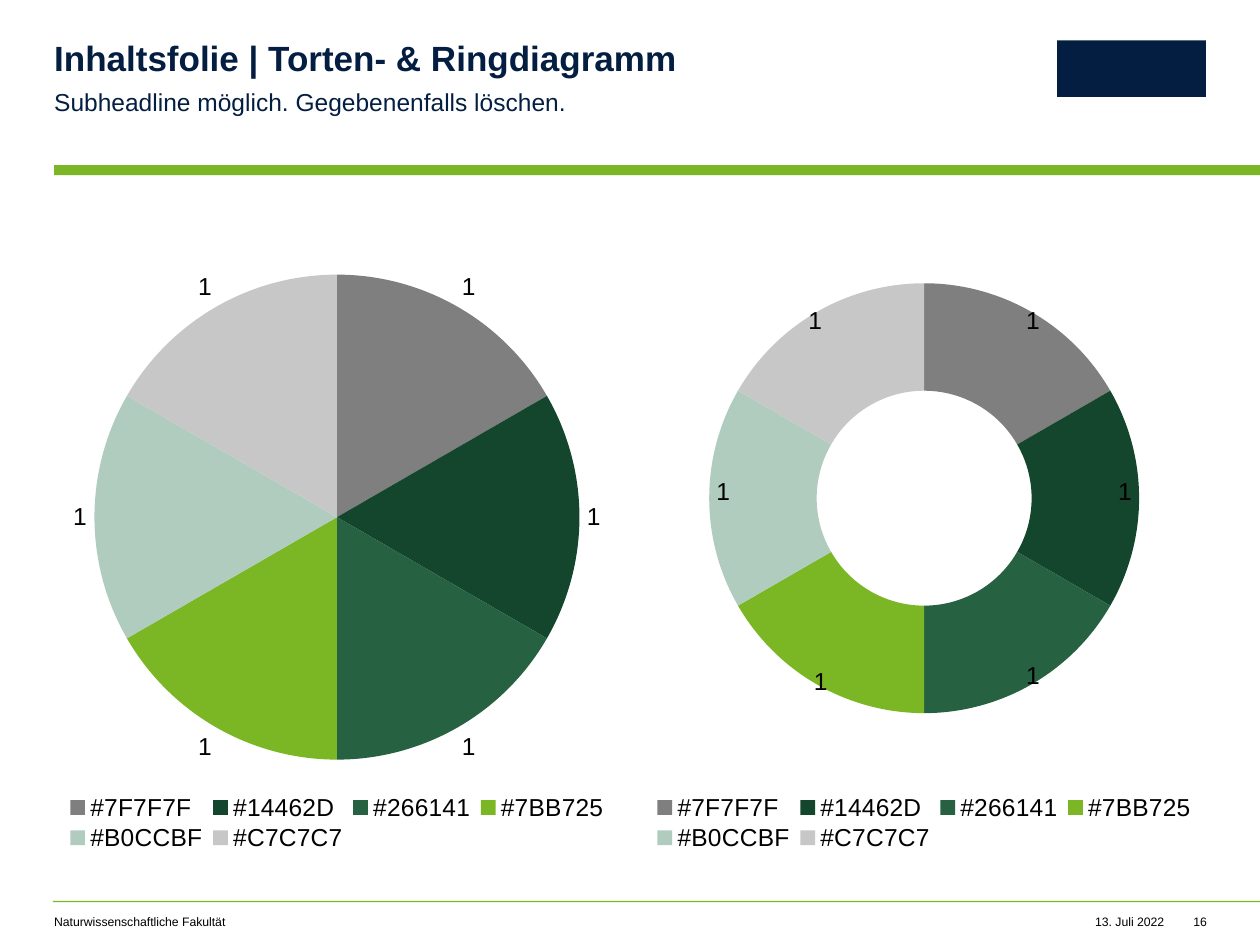
from copy import deepcopy
from dataclasses import dataclass

from lxml import etree
from pptx import Presentation, util as u
from pptx.chart.data import CategoryChartData
from pptx.dml.color import RGBColor
from pptx.enum import chart as charts, shapes, text
from pptx.oxml import ns


@dataclass(frozen=True)
class Theme:
    font: str = "Arial"
    navy: str = "041E42"
    green: str = "7BB725"
    black: str = "000000"
    segments: tuple = ("7F7F7F", "14462D", "266141", "7BB725", "B0CCBF", "C7C7C7")
    title: int = 20
    body: int = 14
    chart: int = 10
    footer: int = 7


THEME = Theme()
PIE_PLOT = {"x": 0.07, "y": 0.08, "w": 0.86, "h": 0.77}
RING_PLOT = {"x": 0.12, "y": 0.09, "w": 0.76, "h": 0.69}
LEGEND = {"x": 0.01, "y": 0.9, "w": 0.98, "h": 0.1}
RING_LABEL_SHIFTS = ((0.05, -0.06), (0.07, -0.01), (0.05, 0.06),
                     (-0.04, 0.07), (-0.07, -0.01), (-0.05, -0.06))


def style_font(font, size, color=THEME.black, bold=False):
    font.name = THEME.font
    font.size = u.Pt(size)
    font.bold = bold
    font.color.rgb = RGBColor.from_string(color)


def add_text(slide, wording, left, top, width, height, *, size, color=THEME.black,
             bold=False, align=text.PP_ALIGN.LEFT, wrap=True, line_spacing=1.0,
             space_after=0, right_inset=0):
    box = slide.shapes.add_textbox(*map(u.Inches, (left, top, width, height)))
    frame = box.text_frame
    frame.margin_left = frame.margin_top = frame.margin_bottom = 0
    frame.margin_right = u.Inches(right_inset)
    frame.word_wrap = wrap
    paragraph = frame.paragraphs[0]
    paragraph.alignment = align
    paragraph.line_spacing = line_spacing
    paragraph.space_after = u.Pt(space_after)
    run = paragraph.add_run()
    run.text = wording
    style_font(run.font, size, color, bold)


def add_block(slide, left, top, width, height, color):
    block = slide.shapes.add_shape(shapes.MSO_SHAPE.RECTANGLE,
                                   *map(u.Inches, (left, top, width, height)))
    block.shadow.inherit = False
    block.fill.solid()
    block.fill.fore_color.rgb = RGBColor.from_string(color)
    block.line.fill.background()


def add_value(parent, tag, value):
    etree.SubElement(parent, ns.qn(f"c:{tag}")).set("val", str(value))


def manual_layout(values, target=None, edge=False):
    layout = etree.Element(ns.qn("c:layout"))
    manual = etree.SubElement(layout, ns.qn("c:manualLayout"))
    if target:
        add_value(manual, "layoutTarget", target)
    if edge:
        add_value(manual, "xMode", "edge")
        add_value(manual, "yMode", "edge")
    for tag, value in values.items():
        add_value(manual, tag, value)
    return layout


def place_part(part, index, layout):
    for previous in part.findall(ns.qn("c:layout")):
        part.remove(previous)
    part.insert(index, layout)


def add_segment_chart(slide, kind, left, plot_place):
    segments = CategoryChartData()
    segments.categories = [f"#{color}" for color in THEME.segments]
    segments.add_series("Series 1", [1] * len(THEME.segments))
    chart = slide.shapes.add_chart(
        kind, *map(u.Inches, (left, 1.78, 4.49, 5)), segments).chart
    chart.has_title = False
    style_font(chart.font, THEME.chart)
    chart.has_legend = True
    chart.legend.position = charts.XL_LEGEND_POSITION.BOTTOM
    chart.legend.include_in_layout = False
    style_font(chart.legend.font, THEME.body)
    plot = chart.plots[0]
    plot.vary_by_categories = True
    series = plot.series[0]
    for index, color in enumerate(THEME.segments):
        fill = series.points[index].format.fill
        fill.solid()
        fill.fore_color.rgb = RGBColor.from_string(color)
    labels = series.data_labels
    labels.show_value = True
    labels.show_percentage = False
    style_font(labels.font, THEME.body)
    if kind == charts.XL_CHART_TYPE.PIE:
        labels.position = charts.XL_LABEL_POSITION.OUTSIDE_END
    plot_area = chart.element.xpath(".//c:plotArea")[0]
    legend = chart.element.xpath(".//c:legend")[0]
    place_part(plot_area, 0, manual_layout(plot_place, target="inner", edge=True))
    place_part(legend, 1, manual_layout(LEGEND, edge=True))
    return chart


def arrange_ring(chart):
    chart.element.xpath(".//c:holeSize")[0].set("val", "80")
    labels = chart.element.xpath(".//c:ser/c:dLbls")[0]
    label_font = labels.find(ns.qn("c:txPr"))
    for index, (x, y) in enumerate(RING_LABEL_SHIFTS):
        label = etree.Element(ns.qn("c:dLbl"))
        add_value(label, "idx", index)
        label.append(manual_layout({"x": x, "y": y}))
        label.append(deepcopy(label_font))
        for part in ("LegendKey", "Val", "CatName", "SerName", "Percent", "BubbleSize"):
            add_value(label, f"show{part}", int(part == "Val"))
        labels.insert(index, label)


def main():
    deck = Presentation()
    deck.slide_width, deck.slide_height = u.Inches(10), u.Inches(7.5)
    slide = deck.slides.add_slide(deck.slide_layouts[6])

    add_block(slide, 0.43, 1.31, 9.57, 0.08, THEME.green)
    add_block(slide, 0.42, 7.15, 9.58, 0.01, THEME.green)
    add_block(slide, 8.39, 0.32, 1.18, 0.45, THEME.navy)

    right = text.PP_ALIGN.RIGHT
    add_text(slide, "13. Juli 2022", 8.53, 7.26, 0.71, 0.12,
             size=THEME.footer, align=right, wrap=False)
    add_text(slide, "Naturwissenschaftliche Fakultät", 0.43, 7.26, 4.49, 0.12,
             size=THEME.footer)
    add_text(slide, "16", 9.41, 7.26, 0.17, 0.1,
             size=THEME.footer, align=right, wrap=False)
    add_text(slide, "Inhaltsfolie | Torten- & Ringdiagramm", 0.43, 0.33, 5.61, 0.3,
             size=THEME.title, color=THEME.navy, bold=True, line_spacing=0.9)
    add_text(slide, "Subheadline möglich. Gegebenenfalls löschen.", 0.43, 0.67, 5.61, 0.24,
             size=THEME.body, color=THEME.navy, line_spacing=1.1, space_after=8,
             right_inset=0.39)

    add_segment_chart(slide, charts.XL_CHART_TYPE.PIE, 0.43, PIE_PLOT)
    ring = add_segment_chart(slide, charts.XL_CHART_TYPE.DOUGHNUT, 5.09, RING_PLOT)
    arrange_ring(ring)
    deck.save("out.pptx")


if __name__ == "__main__":
    main()
